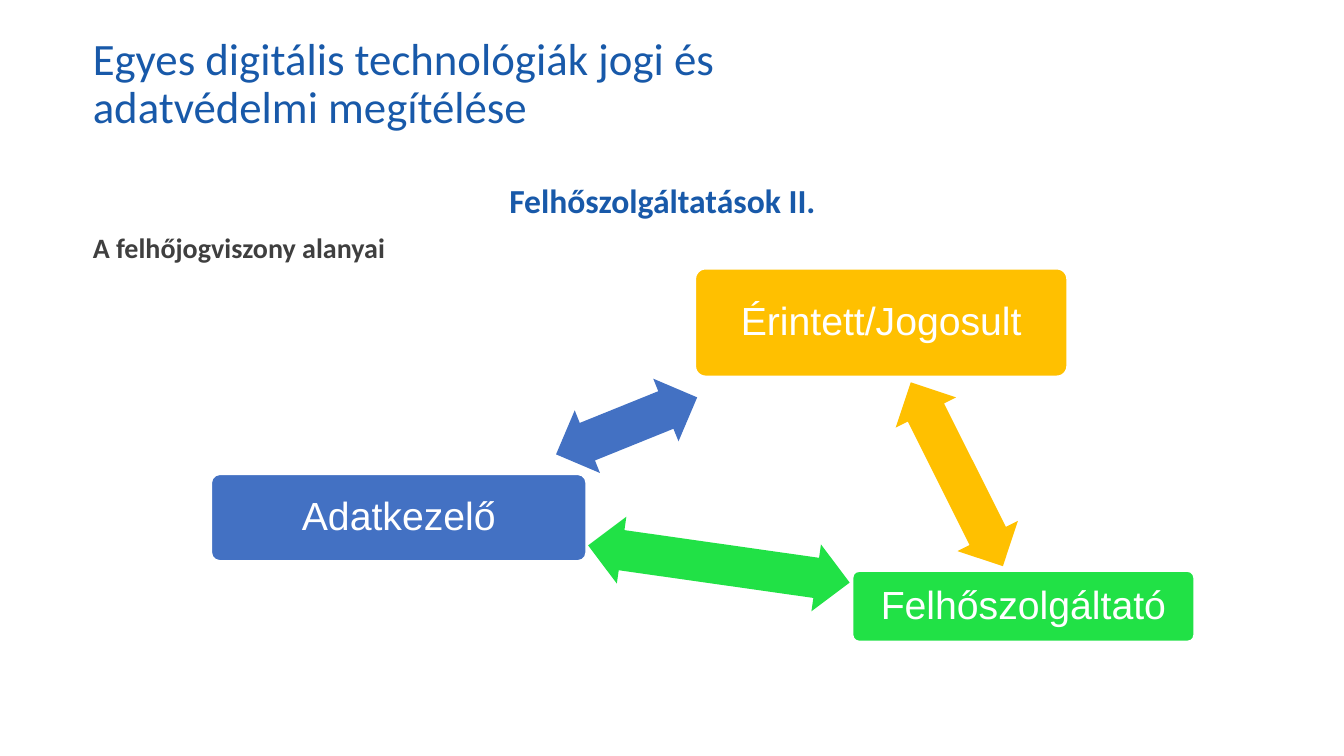
"""Build the slide on the parties of a cloud service relationship."""
from dataclasses import dataclass

from lxml import etree
from pptx import Presentation
from pptx.dml.color import RGBColor
from pptx.enum.shapes import MSO_SHAPE
from pptx.enum.text import MSO_ANCHOR, MSO_AUTO_SIZE, PP_ALIGN
from pptx.oxml.ns import qn
from pptx.util import Inches, Pt

ROUND_RECT = MSO_SHAPE.ROUNDED_RECTANGLE
DOUBLE_ARROW = MSO_SHAPE.LEFT_RIGHT_ARROW
MIDDLE, TOP = MSO_ANCHOR.MIDDLE, MSO_ANCHOR.TOP
LEFT, CENTER = PP_ALIGN.LEFT, PP_ALIGN.CENTER
NO_AUTOFIT = MSO_AUTO_SIZE.NONE


@dataclass(frozen=True)
class Theme:
    heading_font: str = "Calibri"
    party_font: str = "Arial"
    heading: str = "1859A9"
    body: str = "3F3F3F"
    white: str = "FFFFFF"
    yellow: str = "FFC000"
    green: str = "21E146"
    blue: str = "4371C3"
    title_size: int = 32
    subtitle_size: int = 24
    body_size: int = 20
    party_size: int = 28
    line_spacing: float = 0.9


@dataclass(frozen=True)
class Party:
    name: str
    left: float
    top: float
    width: float
    height: float
    color: str


@dataclass(frozen=True)
class Link:
    left: float
    top: float
    length: float
    angle: float
    color: str


THEME = Theme()
ARROW_HEIGHT = 0.67
PARTIES = [
    Party("Érintett/Jogosult", 6.89, 2.66, 3.7, 1.08, THEME.yellow),
    Party("Felhőszolgáltató", 8.45, 5.66, 3.4, 0.71, THEME.green),
    Party("Adatkezelő", 2.09, 4.7, 3.73, 0.87, THEME.blue),
]
LINKS = [
    Link(8.47, 4.37, 2.04, 63.4, THEME.yellow),
    Link(5.82, 5.26, 2.62, 188.1, THEME.green),
    Link(5.46, 3.89, 1.51, 338, THEME.blue),
]


def place(s, left: float, top: float, width: float, height: float) -> None:
    s.left, s.top = Inches(left), Inches(top)
    s.width, s.height = Inches(width), Inches(height)


def prepare_frame(tf, anchor, margin_x: float, margin_y: float) -> None:
    tf.word_wrap = True
    tf.auto_size = NO_AUTOFIT
    tf.vertical_anchor = anchor
    tf.margin_left = tf.margin_right = Inches(margin_x)
    tf.margin_top = tf.margin_bottom = Inches(margin_y)


def format_paragraph(p, align, font: str, size: int, color: str,
                     bold: bool = False, before: int = 0) -> None:
    p.alignment = align
    p.line_spacing = THEME.line_spacing
    p.space_before = Pt(before)
    for r in p.runs:
        r.font.name = font
        r.font.size = Pt(size)
        r.font.bold = bold
        r.font.color.rgb = RGBColor.from_string(color)


def remove_bullet(p) -> None:
    pPr = p._p.get_or_add_pPr()
    pPr.set("marL", "0")
    pPr.set("indent", "0")
    etree.SubElement(pPr, qn("a:buNone"))


def add_title(slide) -> None:
    s = slide.shapes.title
    place(s, 0.82, 0.32, 10.08, 1.04)
    tf = s.text_frame
    tf.text = "Egyes digitális technológiák jogi és\vadatvédelmi megítélése"
    prepare_frame(tf, MIDDLE, 0.1, 0.05)
    format_paragraph(tf.paragraphs[0], LEFT, THEME.heading_font,
                     THEME.title_size, THEME.heading)


def add_body(slide) -> None:
    s = slide.placeholders[1]
    place(s, 0.82, 1.78, 11.5, 4.46)
    tf = s.text_frame
    tf.text = "Felhőszolgáltatások II.\nA felhőjogviszony alanyai"
    prepare_frame(tf, TOP, 0.1, 0.05)
    for p in tf.paragraphs:
        remove_bullet(p)
    subtitle, lead = tf.paragraphs
    format_paragraph(subtitle, CENTER, THEME.heading_font,
                     THEME.subtitle_size, THEME.heading, bold=True)
    format_paragraph(lead, LEFT, THEME.heading_font,
                     THEME.body_size, THEME.body, bold=True, before=10)


def add_party(slide, party: Party) -> None:
    s = slide.shapes.add_shape(
        ROUND_RECT, Inches(party.left), Inches(party.top),
        Inches(party.width), Inches(party.height))
    s.shadow.inherit = False
    s.adjustments[0] = 0.1
    s.fill.solid()
    s.fill.fore_color.rgb = RGBColor.from_string(party.color)
    s.line.color.rgb = RGBColor.from_string(THEME.white)
    s.line.width = Pt(2)
    tf = s.text_frame
    tf.text = party.name
    prepare_frame(tf, MIDDLE, 0.12, 0.12)
    format_paragraph(tf.paragraphs[0], CENTER, THEME.party_font,
                     THEME.party_size, THEME.white)


def add_link(slide, link: Link) -> None:
    s = slide.shapes.add_shape(
        DOUBLE_ARROW, Inches(link.left), Inches(link.top),
        Inches(link.length), Inches(ARROW_HEIGHT))
    s.shadow.inherit = False
    s.adjustments[0] = 0.6
    s.adjustments[1] = 0.5
    s.rotation = link.angle
    s.fill.solid()
    s.fill.fore_color.rgb = RGBColor.from_string(link.color)
    s.line.fill.background()


def main() -> None:
    prs = Presentation()
    prs.slide_width, prs.slide_height = Inches(13.33), Inches(7.5)
    slide = prs.slides.add_slide(prs.slide_layouts[1])
    add_title(slide)
    add_body(slide)
    for party in PARTIES:
        add_party(slide, party)
    for link in LINKS:
        add_link(slide, link)
    prs.save("out.pptx")


if __name__ == "__main__":
    main()
